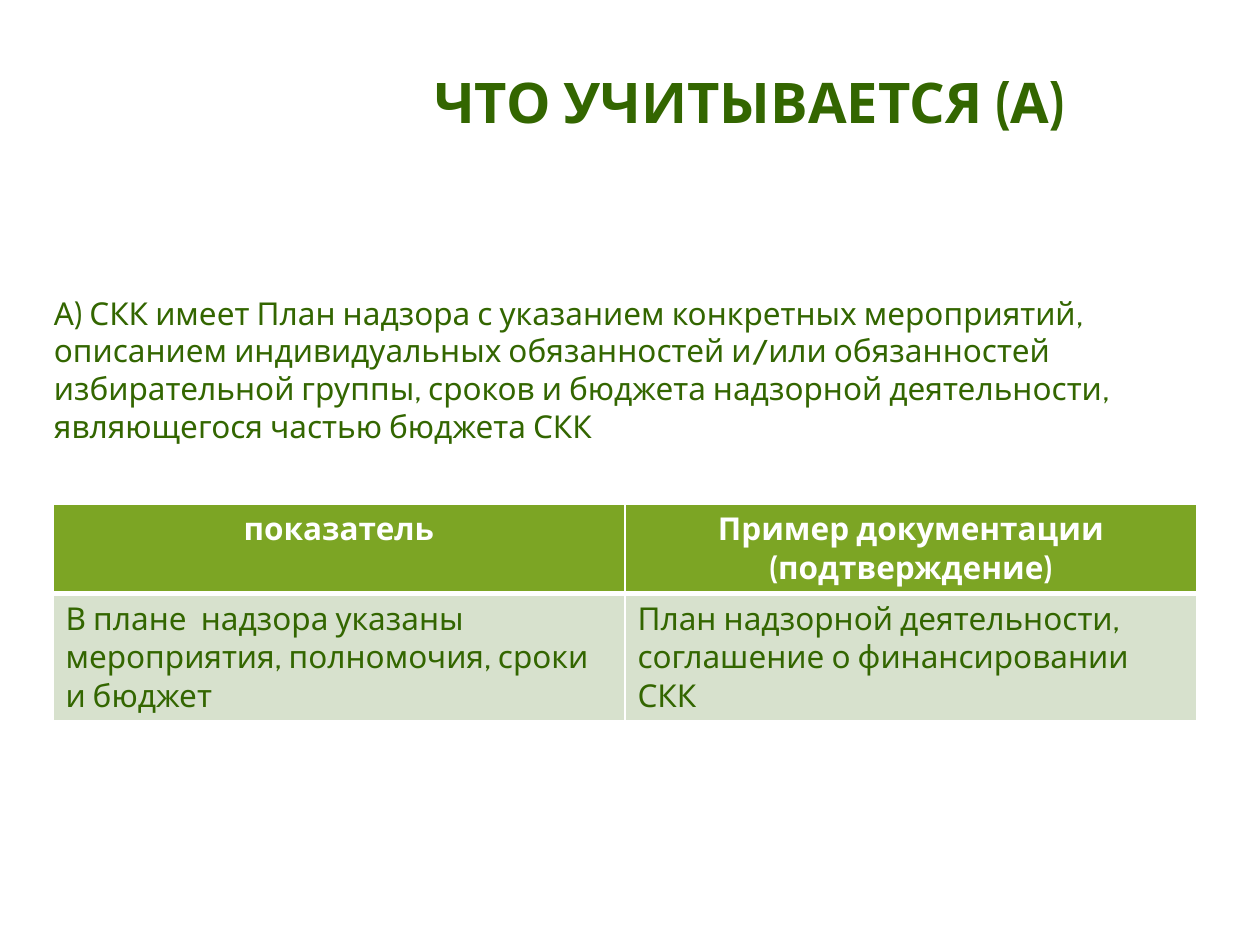
from pptx import Presentation
from pptx.dml.color import RGBColor
from pptx.enum.text import MSO_ANCHOR, PP_ALIGN
from pptx.oxml import parse_xml
from pptx.oxml.ns import nsdecls
from pptx.util import Inches, Pt

DARK_GREEN = RGBColor(0x33, 0x66, 0x00)
HEADER_GREEN = RGBColor(0x7C, 0xA5, 0x24)
PALE_GREEN = RGBColor(0xD7, 0xE1, 0xCD)
WHITE = RGBColor(0xFF, 0xFF, 0xFF)


def write(frame, text, size, color, bold=False, align=PP_ALIGN.LEFT):
    para = frame.paragraphs[0]
    para.alignment = align
    span = para.add_run()
    span.text = text
    for name, value in {"name": "Cabin", "size": Pt(size), "bold": bold}.items():
        setattr(span.font, name, value)
    span.font.color.rgb = color


def add_borders(cell, widths):
    # Border lines come before the fill in the cell properties
    properties = cell._tc.get_or_add_tcPr()
    for index, (side, width) in enumerate(widths.items()):
        properties.insert(index, parse_xml(
            f'<a:ln{side} {nsdecls("a")} w="{Pt(width)}"><a:solidFill>'
            f'<a:srgbClr val="{WHITE}"/></a:solidFill></a:ln{side}>'))


deck = Presentation()
deck.slide_width, deck.slide_height = Inches(10), Inches(7.5)
page = deck.slides.add_slide(deck.slide_layouts[5])

# Title
title = page.shapes.title
title.left, title.top = Inches(1.99), Inches(0.2)
title.width, title.height = Inches(7.92), Inches(1.2)
title.text_frame.vertical_anchor = MSO_ANCHOR.MIDDLE
write(title.text_frame, "ЧТО УЧИТЫВАЕТСЯ (А)", 32, DARK_GREEN, True, PP_ALIGN.CENTER)

# Requirement
box = page.shapes.add_textbox(Inches(0.33), Inches(1.92), Inches(9.5), Inches(4.75))
box.text_frame.word_wrap = True
box.text_frame.margin_top = Inches(0.41)
write(box.text_frame,
      "А) СКК имеет План надзора с указанием конкретных мероприятий, "
      "описанием индивидуальных обязанностей и/или обязанностей "
      "избирательной группы, сроков и бюджета надзорной деятельности, "
      "являющегося частью бюджета СКК", 18, DARK_GREEN)

# Indicator table: text, fill, text colour, bold, alignment, height, bottom line
rows = [
    (["показатель", "Пример документации (подтверждение)"],
     HEADER_GREEN, WHITE, True, PP_ALIGN.CENTER, 0.71, 3),
    (["В плане  надзора указаны мероприятия, полномочия, сроки и бюджет",
      "План надзорной деятельности, соглашение о финансировании СКК"],
     PALE_GREEN, DARK_GREEN, False, PP_ALIGN.LEFT, 1.01, 1),
]
table = page.shapes.add_table(len(rows), 2, Inches(0.42), Inches(4),
                              Inches(9.08), Inches(1.72)).table
top_line = 1
for row, (texts, fill, color, bold, align, height, bottom_line) in enumerate(rows):
    table.rows[row].height = Inches(height)
    for column, text in enumerate(texts):
        cell = table.cell(row, column)
        cell.fill.solid()
        cell.fill.fore_color.rgb = fill
        write(cell.text_frame, text, 18, color, bold, align)
        add_borders(cell, {"L": 1, "R": 1, "T": top_line, "B": bottom_line})
    top_line = bottom_line

deck.save("out.pptx")
